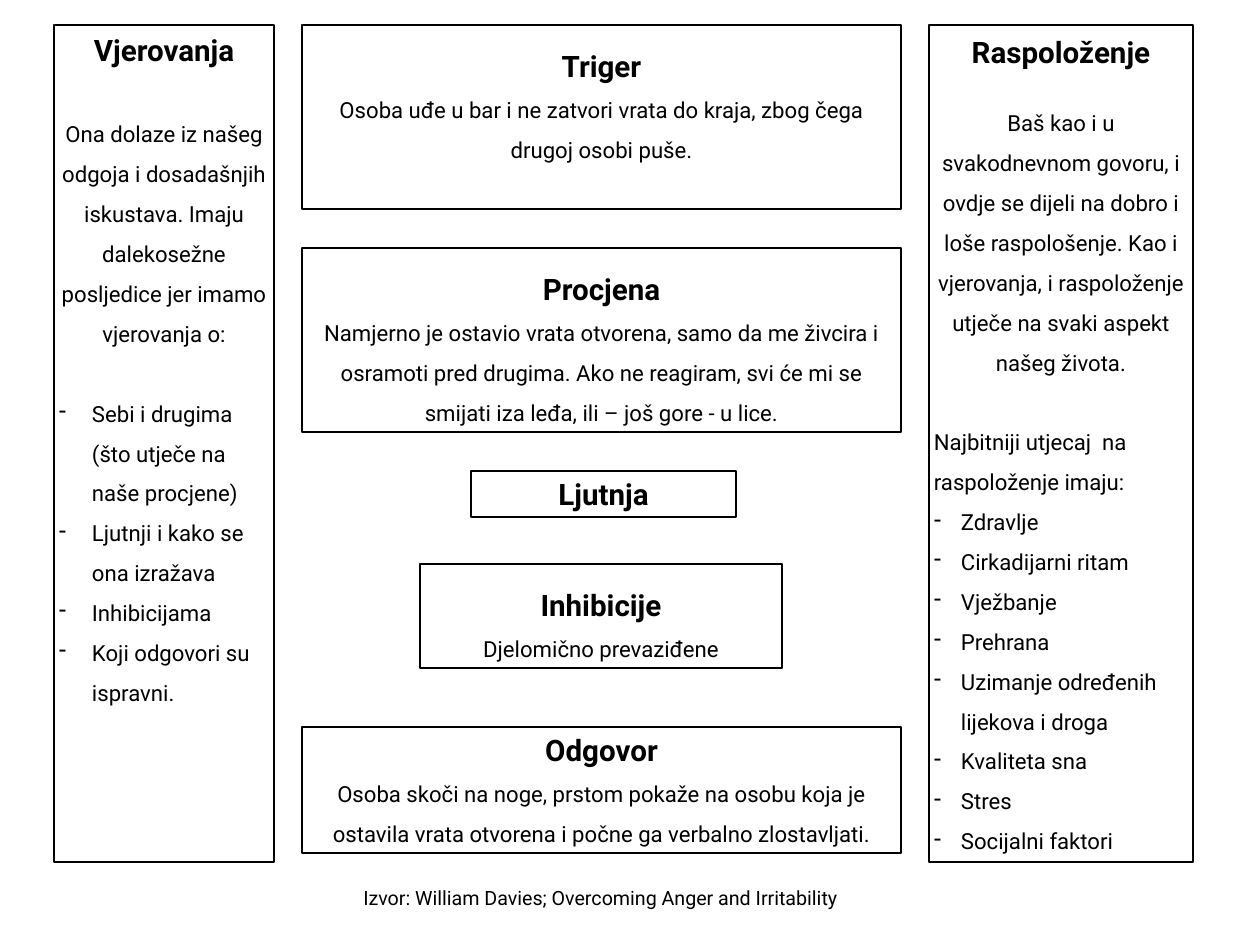
from lxml.etree import SubElement
from pptx import Presentation
from pptx.dml.color import RGBColor
from pptx.enum.shapes import MSO_SHAPE
from pptx.enum.text import MSO_ANCHOR, PP_ALIGN
from pptx.oxml.ns import qn
from pptx.util import Emu, Pt

EMU_PER_PX = 10320
FONT = "Roboto"
COLORS = {"ink": "000000", "paper": "FFFFFF"}
INSET = 5
TITLE_SIZE, BODY_SIZE, SOURCE_SIZE = 24, 18, 16

BELIEFS = [
    "Sebi i drugima (što utječe na naše procjene)",
    "Ljutnji i kako se ona izražava",
    "Inhibicijama",
    "Koji odgovori su ispravni.",
]
MOOD_FACTORS = [
    "Zdravlje",
    "Cirkadijarni ritam",
    "Vježbanje",
    "Prehrana",
    "Uzimanje određenih lijekova i droga",
    "Kvaliteta sna",
    "Stres",
    "Socijalni faktori",
]


def px(length):
    return Emu(length * EMU_PER_PX)


def color(name):
    return RGBColor.from_string(COLORS[name])


def prepare_frame(frame, top_inset=INSET):
    frame.word_wrap = True
    frame.vertical_anchor = MSO_ANCHOR.TOP
    frame.margin_left = frame.margin_right = frame.margin_bottom = px(INSET)
    frame.margin_top = px(top_inset)


def add_paragraph(frame, text, size=BODY_SIZE, bold=False, spacing=1.5,
                  align=PP_ALIGN.CENTER, gap=0, hang=0):
    """Add one paragraph; hang is the indent of a dash bullet."""
    first = frame.paragraphs[0]
    paragraph = frame.add_paragraph() if first.runs else first
    if hang:
        properties = paragraph._p.get_or_add_pPr()
        properties.set("marL", str(px(hang)))
        properties.set("indent", str(-px(hang)))
        SubElement(properties, qn("a:buChar")).set("char", "-")
    paragraph.alignment = align
    paragraph.line_spacing = spacing
    if gap:
        paragraph.space_before = px(gap)
    run = paragraph.add_run()
    run.text = text
    run.font.name = FONT
    run.font.size = Pt(size)
    run.font.bold = bold
    run.font.color.rgb = color("ink")


def add_box(slide, bounds, title, title_spacing=1.0, body=None, body_gap=0,
            top_inset=INSET):
    """Draw an outlined box with a heading and an optional centred text."""
    box = slide.shapes.add_shape(MSO_SHAPE.RECTANGLE, *map(px, bounds))
    box.shadow.inherit = False
    box.fill.solid()
    box.fill.fore_color.rgb = color("paper")
    box.line.color.rgb = color("ink")
    box.line.width = Pt(2)
    frame = box.text_frame
    prepare_frame(frame, top_inset)
    add_paragraph(frame, title, TITLE_SIZE, True, title_spacing)
    if body:
        add_paragraph(frame, body, gap=body_gap)
    return frame


def add_dashes(frame, items, hang, first_gap=0):
    for index, item in enumerate(items):
        add_paragraph(frame, item, align=PP_ALIGN.LEFT, hang=hang,
                      gap=0 if index else first_gap)


def add_source(slide, bounds, text):
    frame = slide.shapes.add_textbox(*map(px, bounds)).text_frame
    prepare_frame(frame)
    add_paragraph(frame, text, SOURCE_SIZE, spacing=1.0)


def main():
    presentation = Presentation()
    presentation.slide_width, presentation.slide_height = px(1260), px(945)
    slide = presentation.slides.add_slide(presentation.slide_layouts[6])

    # Central chain, from trigger to response
    add_box(slide, (302, 25, 599, 184), "Triger", 1.5,
            "Osoba uđe u bar i ne zatvori vrata do kraja, zbog čega drugoj "
            "osobi puše.")
    add_box(slide, (302, 248, 599, 184), "Procjena", 1.5,
            "Namjerno je ostavio vrata otvorena, samo da me živcira i "
            "osramoti pred drugima. Ako ne reagiram, svi će mi se smijati "
            "iza leđa, ili – još gore - u lice.")
    add_box(slide, (471, 471, 265, 46), "Ljutnja")
    add_box(slide, (420, 564, 362, 104), "Inhibicije", 1.5,
            "Djelomično prevaziđene")
    add_box(slide, (302, 727, 599, 126), "Odgovor", 1.0,
            "Osoba skoči na noge, prstom pokaže na osobu koja je ostavila "
            "vrata otvorena i počne ga verbalno zlostavljati.")

    # Beliefs on the left
    beliefs = add_box(
        slide, (54, 25, 220, 837), "Vjerovanja",
        body="Ona dolaze iz našeg odgoja i dosadašnjih iskustava. Imaju "
             "dalekosežne posljedice jer imamo vjerovanja o:",
        body_gap=40, top_inset=7)
    add_dashes(beliefs, BELIEFS, hang=33, first_gap=40)

    # Mood on the right
    mood = add_box(
        slide, (929, 25, 264, 837), "Raspoloženje",
        body="Baš kao i u svakodnevnom govoru, i ovdje se dijeli na dobro i "
             "loše raspološenje. Kao i vjerovanja, i raspoloženje utječe na "
             "svaki aspekt našeg života.",
        body_gap=27, top_inset=9)
    add_paragraph(mood, "Najbitniji utjecaj  na raspoloženje imaju:",
                  align=PP_ALIGN.LEFT, gap=40)
    add_dashes(mood, MOOD_FACTORS, hang=27)

    # Source line
    add_source(slide, (302, 881, 597, 34),
               "Izvor: William Davies; Overcoming Anger and Irritability")

    presentation.save("out.pptx")


if __name__ == "__main__":
    main()
